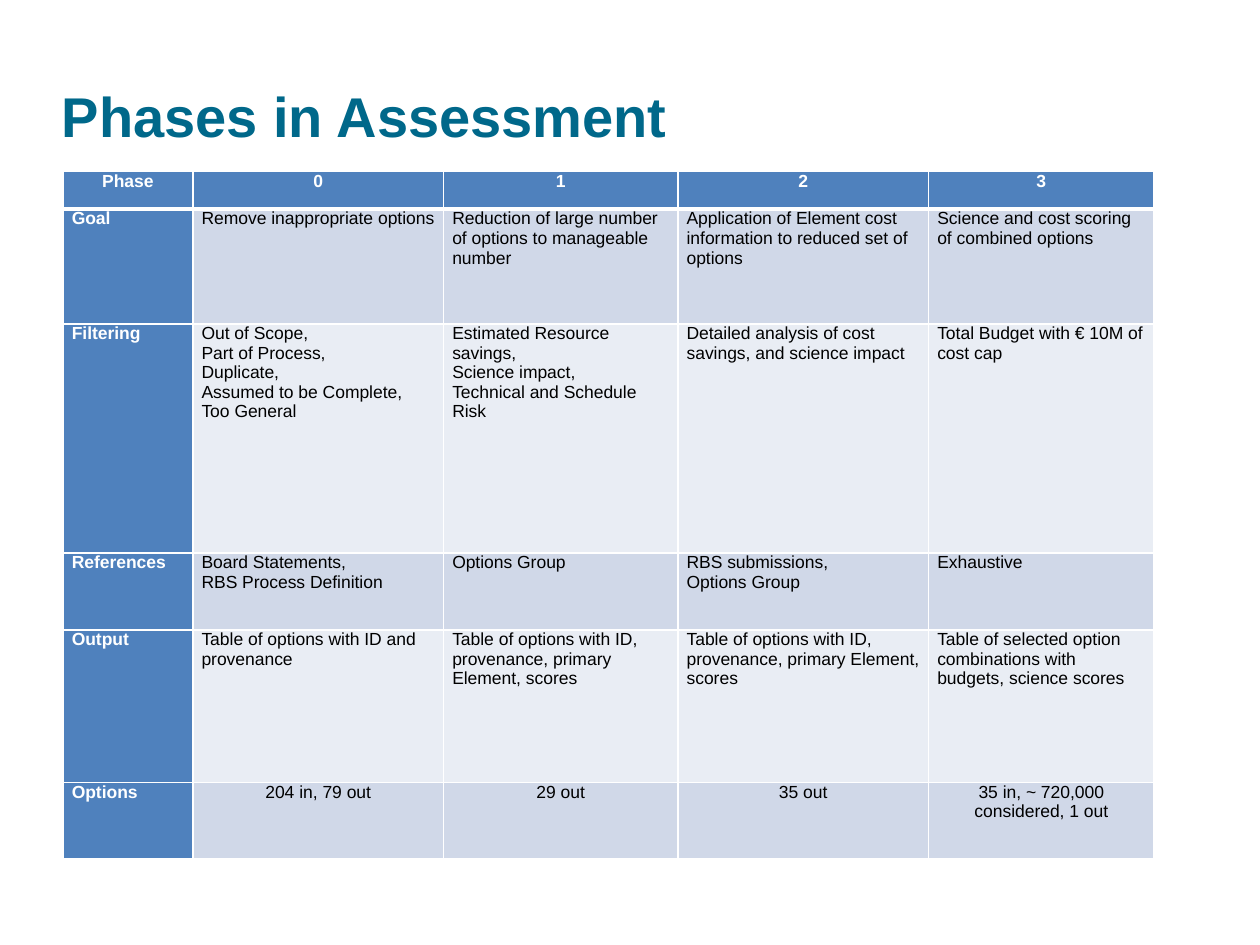
"""Build the slide that lists the phases in assessment."""
import pptx
import pptx.dml.color
import pptx.enum.text
import pptx.oxml
import pptx.oxml.ns
import pptx.util

TITLE = "Phases in Assessment"
ROWS = [
    ("Phase", "0", "1", "2", "3"),
    ("Goal",
     "Remove inappropriate options",
     "Reduction of large number of options to manageable number",
     "Application of Element cost information to reduced set of options",
     "Science and cost scoring of combined options"),
    ("Filtering",
     "Out of Scope,\nPart of Process,\nDuplicate,\nAssumed to be Complete,\nToo General",
     "Estimated Resource savings,\nScience impact,\nTechnical and Schedule Risk",
     "Detailed analysis of cost savings, and science impact",
     "Total Budget with € 10M of cost cap"),
    ("References",
     "Board Statements,\nRBS Process Definition",
     "Options Group",
     "RBS submissions,\nOptions Group",
     "Exhaustive"),
    ("Output",
     "Table of options with ID and provenance",
     "Table of options with ID, provenance, primary Element, scores",
     "Table of options with ID, provenance, primary Element, scores",
     "Table of selected option combinations with budgets, science scores"),
    ("Options", "204 in, 79 out", "29 out", "35 out",
     "35 in, ~ 720,000 considered, 1 out"),
]
WIDTHS = [1.03, 1.99, 1.86, 1.99, 1.79]
HEIGHTS = [0.3, 0.91, 1.82, 0.61, 1.21, 0.61]
THEME = {
    "font": "Arial", "title": "00688A", "head": "4F81BD", "odd": "D0D8E8",
    "even": "E9EDF4", "light": "FFFFFF", "dark": "000000",
    "title_size": 32, "cell_size": 10, "thin": 1, "thick": 3,
}

Inches = pptx.util.Inches
Pt = pptx.util.Pt
ALIGN = pptx.enum.text.PP_ALIGN
ANCHOR = pptx.enum.text.MSO_ANCHOR


def color(name):
    return pptx.dml.color.RGBColor.from_string(THEME[name])


def write(frame, text, size, ink, bold, align):
    for i, line in enumerate(text.split("\n")):
        para = frame.paragraphs[0] if i == 0 else frame.add_paragraph()
        para.alignment = align
        run = para.add_run()
        run.text = line
        run.font.name = THEME["font"]
        run.font.size = Pt(THEME[size])
        run.font.bold = bold
        run.font.color.rgb = color(ink)


def border(cell, row):
    thick = {0: "B", 1: "T"}.get(row)
    props = cell._tc.get_or_add_tcPr()
    for side in "LRTB":
        width = Pt(THEME["thick" if side == thick else "thin"])
        props.append(pptx.oxml.parse_xml(
            f'<a:ln{side} {pptx.oxml.ns.nsdecls("a")} w="{width}"><a:solidFill>'
            f'<a:srgbClr val="{THEME["light"]}"/></a:solidFill></a:ln{side}>'))


def add_title(slide):
    title = slide.shapes.title
    title.left, title.top = Inches(0.39), Inches(0.57)
    title.width, title.height = Inches(6.86), Inches(0.68)
    title.text_frame.vertical_anchor = ANCHOR.MIDDLE
    write(title.text_frame, TITLE, "title_size", "title", True, ALIGN.LEFT)


def add_grid(slide):
    table = slide.shapes.add_table(
        len(ROWS), len(WIDTHS), Inches(0.5), Inches(1.36),
        Inches(sum(WIDTHS)), Inches(sum(HEIGHTS))).table
    for col, width in zip(table.columns, WIDTHS):
        col.width = Inches(width)
    for r, texts in enumerate(ROWS):
        table.rows[r].height = Inches(HEIGHTS[r])
        for c, text in enumerate(texts):
            cell = table.cell(r, c)
            head = r == 0 or c == 0
            mid = r == 0 or (r == len(ROWS) - 1 and c > 0)
            cell.margin_left = cell.margin_right = Inches(0.07)
            cell.margin_top = cell.margin_bottom = 0
            border(cell, r)
            cell.fill.solid()
            cell.fill.fore_color.rgb = color(
                "head" if head else "odd" if r % 2 else "even")
            write(cell.text_frame, text, "cell_size",
                  "light" if head else "dark", head,
                  ALIGN.CENTER if mid else ALIGN.LEFT)


def main():
    deck = pptx.Presentation()
    deck.slide_width, deck.slide_height = Inches(10), Inches(7.5)
    slide = deck.slides.add_slide(deck.slide_layouts[5])
    add_title(slide)
    add_grid(slide)
    deck.save("out.pptx")


if __name__ == "__main__":
    main()
